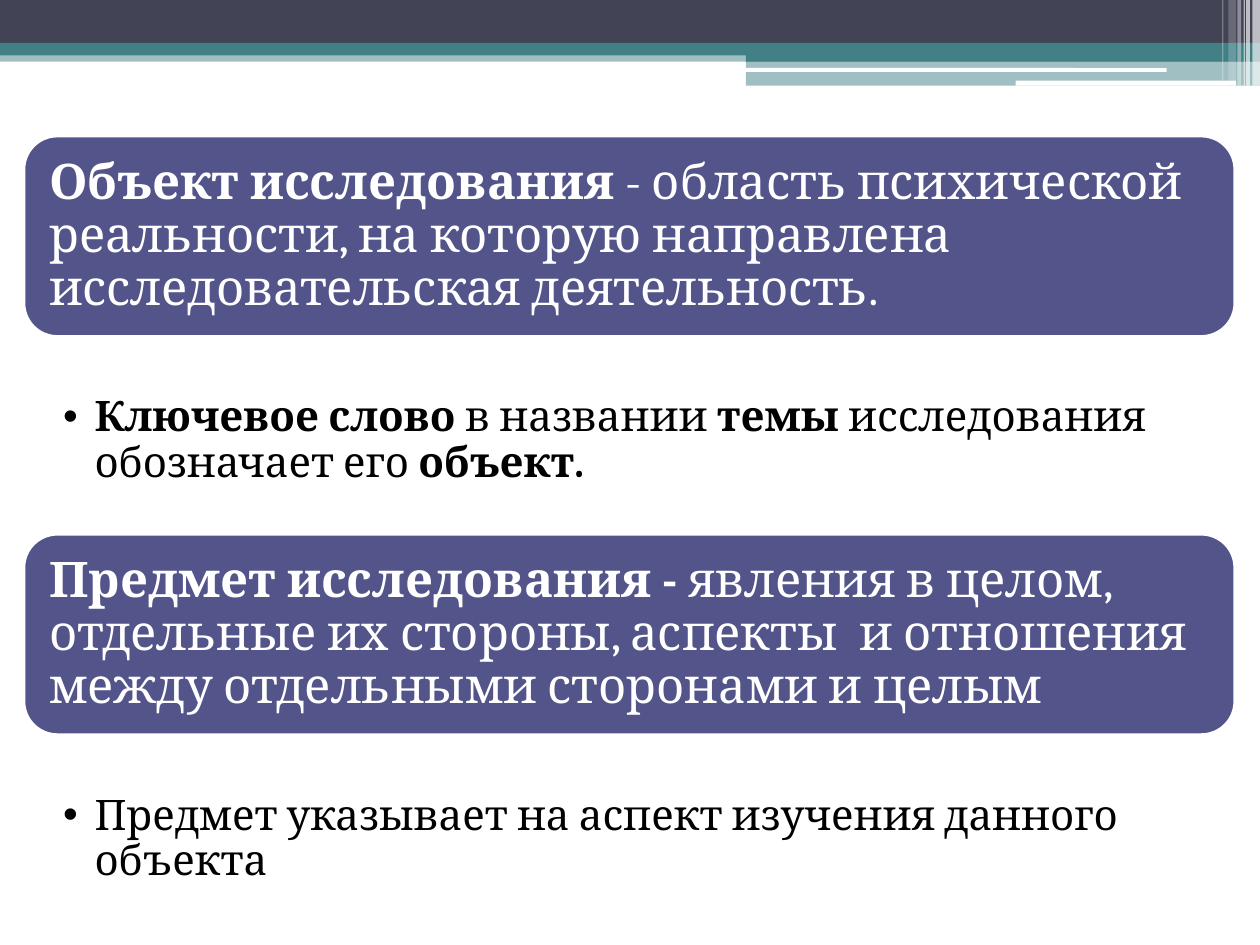
from dataclasses import dataclass

import pptx
import pptx.dml.color
import pptx.enum.shapes
import pptx.enum.text
import pptx.oxml
import pptx.oxml.ns
import pptx.util
from pptx.util import Inches

RGBColor = pptx.dml.color.RGBColor
SHAPES = pptx.enum.shapes.MSO_SHAPE
ANCHORS = pptx.enum.text.MSO_ANCHOR

WHITE = RGBColor(0xFF, 0xFF, 0xFF)
BLACK = RGBColor(0x00, 0x00, 0x00)
SLATE = RGBColor(0x42, 0x44, 0x56)
TEAL = RGBColor(0x43, 0x80, 0x86)
VIOLET = RGBColor(0x53, 0x54, 0x8A)
FONT = "Cambria"
COMPARISON_LAYOUT = 4

# Common column of the panels and their notes
LEFT, WIDTH, PANEL_HEIGHT = 0.19, 9.61, 1.59
PANEL_PADDING = 0.08


@dataclass
class Bar:
    left: float
    top: float
    width: float
    height: float
    color: RGBColor
    opacity: int = 100
    rounded: bool = False


@dataclass
class Span:
    text: str
    bold: bool = False


@dataclass
class Section:
    top: float
    note_height: float
    heading: list[Span]
    note: list[Span]


BARS = [
    Bar(0, 0.4, 10, 0.09, TEAL, 50),
    Bar(0, 0, 10, 0.34, SLATE),
    Bar(0, 0.34, 10, 0.1, TEAL),
    Bar(5.92, 0.39, 4.08, 0.1, TEAL),
    Bar(5.92, 0.48, 4.08, 0.2, TEAL, 50),
    Bar(5.91, 0.54, 3.35, 0.03, WHITE, rounded=True),
    Bar(8.06, 0.64, 1.75, 0.04, WHITE, rounded=True),
    Bar(9.94, 0, 0.06, 0.68, WHITE, 65),
    Bar(9.89, 0, 0.03, 0.68, WHITE, 65),
    Bar(9.87, 0, 0.01, 0.68, WHITE, 60),
    Bar(9.82, 0, 0.03, 0.68, WHITE, 40),
    Bar(9.75, 0, 0.06, 0.64, WHITE, 20),
    Bar(9.7, 0, 0.01, 0.64, WHITE, 30),
]

SECTIONS = [
    Section(
        1.08, 1.57,
        [Span("Объект исследования ", True),
         Span("- область психической реальности, на которую направлена "
              "исследовательская деятельность.")],
        [Span("Ключевое слово ", True), Span("в названии "), Span("темы", True),
         Span(" исследования обозначает его "), Span("объект.", True)],
    ),
    Section(
        4.24, 1.07,
        [Span("Предмет исследования - ", True),
         Span("явления в целом, отдельные их стороны, аспекты  и отношения "
              "между отдельными сторонами и целым")],
        [Span("Предмет указывает на аспект изучения данного объекта")],
    ),
]


def place(shape, left: float, top: float, width: float, height: float) -> None:
    shape.left, shape.top = Inches(left), Inches(top)
    shape.width, shape.height = Inches(width), Inches(height)


def add_bar(page, bar: Bar):
    kind = SHAPES.ROUNDED_RECTANGLE if bar.rounded else SHAPES.RECTANGLE
    shape = page.shapes.add_shape(
        kind, Inches(bar.left), Inches(bar.top), Inches(bar.width), Inches(bar.height))
    shape.shadow.inherit = False
    shape.line.fill.background()
    shape.fill.solid()
    shape.fill.fore_color.rgb = bar.color
    if bar.opacity < 100:
        color = shape.fill._xPr.find(".//" + pptx.oxml.ns.qn("a:srgbClr"))
        alpha = pptx.oxml.parse_xml(
            f'<a:alpha {pptx.oxml.ns.nsdecls("a")} val="{bar.opacity * 1000}"/>')
        color.append(alpha)
    return shape


def write(box, spans: list[Span], size: int, color: RGBColor,
          insets: tuple[float, float, float, float], anchor):
    frame = box.text_frame
    frame.word_wrap = True
    frame.auto_size = pptx.enum.text.MSO_AUTO_SIZE.NONE
    frame.vertical_anchor = anchor
    (frame.margin_left, frame.margin_top,
     frame.margin_right, frame.margin_bottom) = map(Inches, insets)
    para = frame.paragraphs[0]
    para.line_spacing = 0.9
    para.space_before = pptx.util.Pt(0)
    for span in spans:
        run = para.add_run()
        run.text = span.text
        run.font.name = FONT
        run.font.size = pptx.util.Pt(size)
        run.font.bold = span.bold
        run.font.color.rgb = color
    return para


def add_bullet(para) -> None:
    properties = para._p.get_or_add_pPr()
    properties.set("marL", str(Inches(0.25)))
    properties.set("indent", str(-Inches(0.25)))
    properties.append(pptx.oxml.parse_xml(
        f'<a:buChar {pptx.oxml.ns.nsdecls("a")} char="•"/>'))


def add_section(page, section: Section, heading, note) -> None:
    panel = add_bar(page, Bar(LEFT, section.top, WIDTH, PANEL_HEIGHT, VIOLET, rounded=True))
    panel.line.color.rgb = WHITE
    panel.line.width = pptx.util.Pt(1.5)

    # Heading lies on the panel, so it moves in front of it
    place(heading, LEFT + PANEL_PADDING, section.top + PANEL_PADDING,
          WIDTH - 2 * PANEL_PADDING, PANEL_HEIGHT - 2 * PANEL_PADDING)
    write(heading, section.heading, 28, WHITE, (0.12,) * 4, ANCHORS.MIDDLE)
    panel._element.addnext(heading._element)

    # Note starts one line below the panel
    place(note, LEFT, section.top + PANEL_HEIGHT, WIDTH, section.note_height)
    add_bullet(write(note, section.note, 24, BLACK, (0.31, 0.47, 0.19, 0.03), ANCHORS.TOP))


def main() -> None:
    deck = pptx.Presentation()
    deck.slide_width, deck.slide_height = Inches(10), Inches(7.5)
    page = deck.slides.add_slide(deck.slide_layouts[COMPARISON_LAYOUT])
    title, *bodies = page.placeholders
    title._element.getparent().remove(title._element)

    # Header decoration
    for bar in BARS:
        add_bar(page, bar)

    # Definitions with their notes
    for section, heading, note in zip(SECTIONS, bodies[::2], bodies[1::2]):
        add_section(page, section, heading, note)

    deck.save("out.pptx")


if __name__ == "__main__":
    main()
